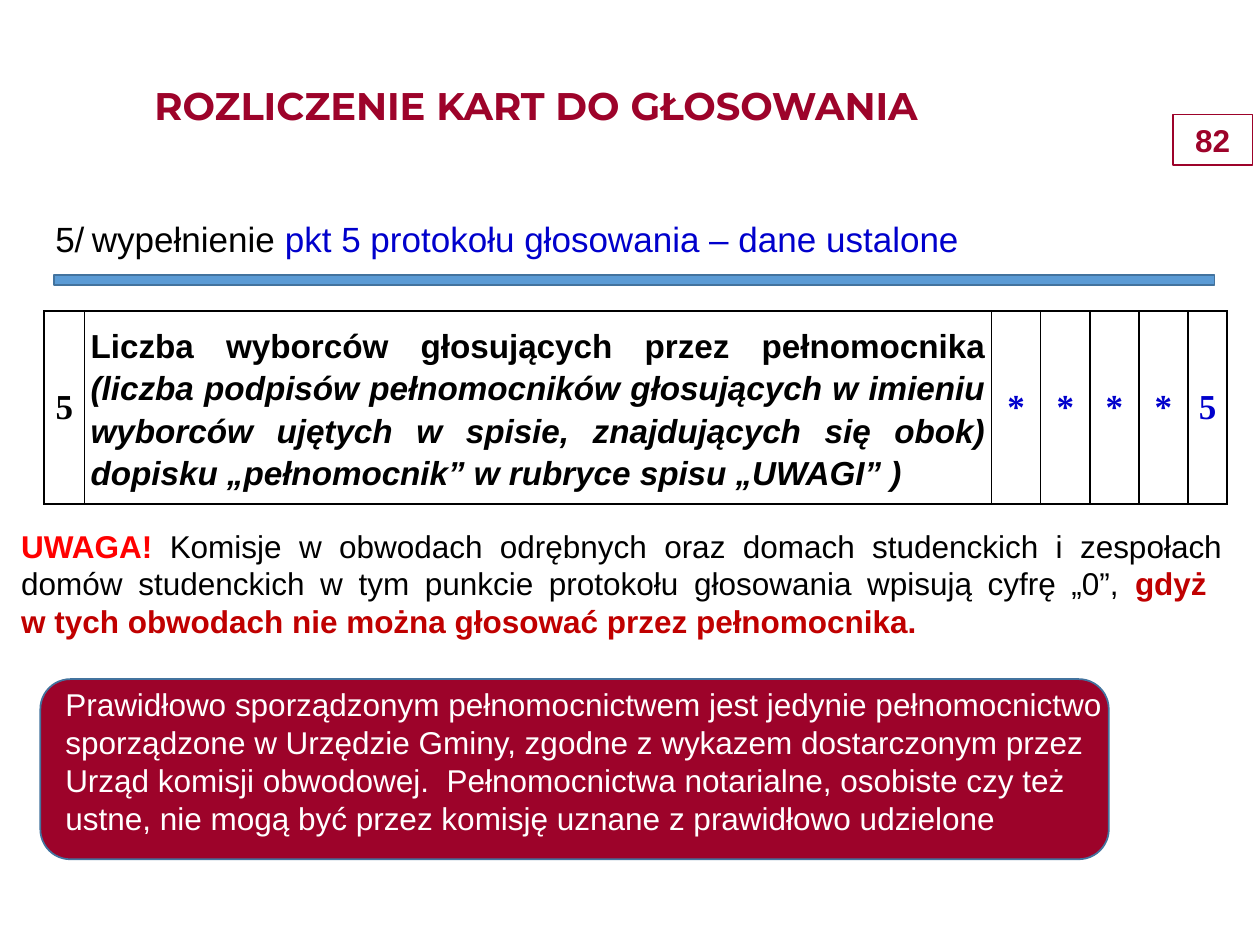
from lxml import etree
from pptx import Presentation
from pptx.dml.color import RGBColor
from pptx.enum.shapes import MSO_SHAPE
from pptx.enum.text import MSO_ANCHOR, MSO_AUTO_SIZE, PP_ALIGN
from pptx.oxml.ns import qn
from pptx.util import Inches, Pt

RECT, ROUND = MSO_SHAPE.RECTANGLE, MSO_SHAPE.ROUNDED_RECTANGLE
MIDDLE, NO_FIT = MSO_ANCHOR.MIDDLE, MSO_AUTO_SIZE.NONE
CENTER, LEFT, JUST = PP_ALIGN.CENTER, PP_ALIGN.LEFT, PP_ALIGN.JUSTIFY

HEX = {"wine": "9D032A", "edge": "43739E", "bar": "5B9BD5", "black": "000000",
       "blue": "0000CC", "red": "FF0000", "dark": "C00000", "white": "FFFFFF"}
RGB = {name: RGBColor.from_string(code) for name, code in HEX.items()}


def write(frame, runs, size, align=LEFT, font="Arial", bold=None):
    """Fill the first paragraph with (text, colour, bold, italic) runs."""
    frame.word_wrap = True
    par = frame.paragraphs[0]
    par.alignment = align
    par.font.size, par.font.name, par.font.bold = Pt(size), font, bold
    for text, tone, *style in runs:
        for i, line in enumerate(text.split("\n")):
            if i:
                par.add_line_break()
            run = par.add_run()
            run.text = line
            run.font.color.rgb = RGB[tone]
            if style:
                run.font.bold, run.font.italic = style
    return par


def shape(kind, box, fill, line, width):
    item = slide.shapes.add_shape(kind, *map(Inches, box))
    item.shadow.inherit = False
    if fill:
        item.fill.solid()
        item.fill.fore_color.rgb = RGB[fill]
    else:
        item.fill.background()
    item.line.color.rgb = RGB[line]
    item.line.width = Pt(width)
    return item


deck = Presentation()
deck.slide_width, deck.slide_height = Inches(10), Inches(7.5)
slide = deck.slides.add_slide(deck.slide_layouts[5])
add_text = slide.shapes.add_textbox

# Title
title = slide.shapes.title
title.left, title.top = Inches(0.75), Inches(0.6)
title.width, title.height = Inches(7.01), Inches(0.47)
title.text_frame.auto_size = NO_FIT
write(title.text_frame, [("ROZLICZENIE KART DO GŁOSOWANIA", "wine")],
      22, CENTER, "Montserrat", True)

# Page number
page = shape(RECT, (9.31, 0.91, 0.63, 0.4), None, "wine", 0.75)
write(page.text_frame, [("82", "wine")], 18, CENTER, bold=True)

# Step heading with hanging number, and bar below
step = add_text(Inches(0.34), Inches(1.68), Inches(9.69), Inches(0.44))
par = write(step.text_frame, [
    ("5/\twypełnienie ", "black"),
    ("pkt 5 protokołu głosowania – dane ustalone", "blue")], 20, JUST)
props = par._p.get_or_add_pPr()
props.set("marL", str(Inches(0.29)))
props.set("indent", str(-Inches(0.29)))
shape(RECT, (0.43, 2.18, 9.21, 0.08), "bar", "edge", 1)

# Protocol row
widths = [0.32, 7.2] + [0.39] * 4 + [0.31]
grid = slide.shapes.add_table(1, len(widths), Inches(0.35), Inches(2.47),
                              Inches(9.37), Inches(1.53)).table
grid.first_row = grid.horz_banding = False
label = [
    ("Liczba wyborców głosujących przez pełnomocnika", "black"),
    (" (liczba podpisów pełnomocników głosujących w imieniu wyborców ujętych "
     "w spisie, znajdujących się obok) dopisku „pełnomocnik” w rubryce spisu "
     "„UWAGI” )", "black", True, True)]
cells = [[("5", "black")], label] + [[(mark, "blue")] for mark in "****5"]
for col, (width, runs) in enumerate(zip(widths, cells)):
    grid.columns[col].width = Inches(width)
    cell = grid.cell(0, col)
    cell.vertical_anchor = MIDDLE
    cell.margin_left = cell.margin_right = Inches(0.05)
    cell.margin_top = cell.margin_bottom = 0
    cell.fill.background()
    if runs is label:
        par = write(cell.text_frame, runs, 19, JUST, bold=True)
        par.line_spacing = 1.15
    else:
        write(cell.text_frame, runs, 20, CENTER, "Times New Roman", True)
    edges = cell._tc.get_or_add_tcPr()
    for i, side in enumerate(("lnL", "lnR", "lnT", "lnB")):
        edge = etree.Element(qn("a:" + side), w=str(Pt(1)))
        fill = etree.SubElement(edge, qn("a:solidFill"))
        etree.SubElement(fill, qn("a:srgbClr"), val=HEX["black"])
        edges.insert(i, edge)

# Warning
note = add_text(Inches(0.07), Inches(4.13), Inches(9.73), Inches(1.01))
write(note.text_frame, [
    ("UWAGA! ", "red", True, False),
    ("Komisje w obwodach odrębnych oraz domach studenckich i zespołach domów "
     "studenckich w tym punkcie protokołu głosowania wpisują cyfrę „0”, ",
     "black"),
    ("gdyż \nw tych obwodach nie można głosować przez pełnomocnika.",
     "dark", True, False)], 18, JUST)

# Proxy rule on a rounded panel
shape(ROUND, (0.32, 5.39, 8.48, 1.43), "wine", "edge", 1)
rule = add_text(Inches(0.42), Inches(5.39), Inches(8.5), Inches(1.31))
write(rule.text_frame, [(
    "Prawidłowo sporządzonym pełnomocnictwem jest jedynie pełnomocnictwo "
    "sporządzone w Urzędzie Gminy, zgodne z wykazem dostarczonym przez Urząd "
    "komisji obwodowej.  Pełnomocnictwa notarialne, osobiste czy też ustne, "
    "nie mogą być przez komisję uznane z prawidłowo udzielone", "white")], 18)

deck.save("out.pptx")
